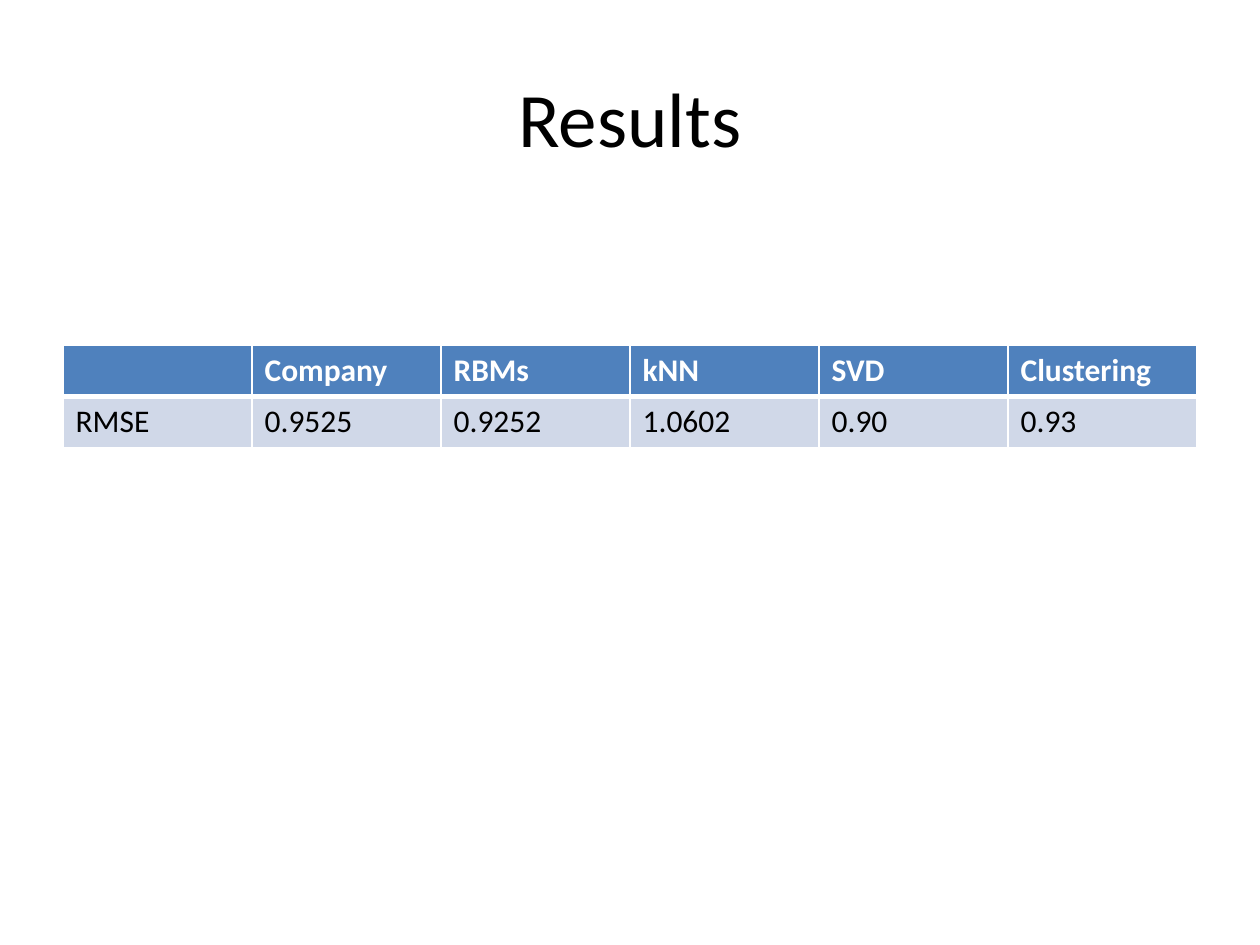
from dataclasses import dataclass

from lxml import etree
from pptx import Presentation
from pptx.dml.color import RGBColor
from pptx.enum.text import MSO_ANCHOR, PP_ALIGN
from pptx.oxml.ns import qn
from pptx.util import Inches, Pt

CENTER = PP_ALIGN.CENTER
MIDDLE = MSO_ANCHOR.MIDDLE
TITLE_ONLY = 5

RESULTS = [
    ["", "Company", "RBMs", "kNN", "SVD", "Clustering"],
    ["RMSE", "0.9525", "0.9252", "1.0602", "0.90", "0.93"],
]


@dataclass(frozen=True)
class Theme:
    """Colours, type and rule widths of the slide."""

    font: str = "Calibri"
    title_size: int = 44
    table_size: int = 18
    ink: str = "000000"
    paper: str = "FFFFFF"
    header: str = "4F81BD"
    band: str = "D0D8E8"
    thin_rule: int = 1
    header_rule: int = 3


THEME = Theme()


def style_text(paragraph, size, color, bold=False):
    """Format every run of a paragraph."""
    for run in paragraph.runs:
        run.font.name = THEME.font
        run.font.size = Pt(size)
        run.font.bold = bold
        run.font.color.rgb = RGBColor.from_string(color)


def add_title(slide, text):
    """Place and format the slide title."""
    title = slide.shapes.title
    title.left, title.top = Inches(0.5), Inches(0.3)
    title.width, title.height = Inches(9), Inches(1.25)
    title.text_frame.text = text
    title.text_frame.vertical_anchor = MIDDLE
    heading = title.text_frame.paragraphs[0]
    heading.alignment = CENTER
    style_text(heading, THEME.title_size, THEME.ink)


def set_borders(cell, top, bottom):
    """Draw the cell's four rules, with thin ones at the sides."""
    properties = cell._tc.get_or_add_tcPr()
    widths = {"lnL": THEME.thin_rule, "lnR": THEME.thin_rule, "lnT": top, "lnB": bottom}
    for side, width in widths.items():
        rule = etree.SubElement(properties, qn(f"a:{side}"), w=str(Pt(width)))
        fill = etree.SubElement(rule, qn("a:solidFill"))
        etree.SubElement(fill, qn("a:srgbClr"), val=THEME.paper)


def style_cell(cell, text, is_header):
    """Fill one cell with its text, rules and colours."""
    top, bottom = THEME.thin_rule, THEME.header_rule
    if not is_header:
        top, bottom = bottom, top
    set_borders(cell, top, bottom)
    cell.fill.solid()
    cell.fill.fore_color.rgb = RGBColor.from_string(THEME.header if is_header else THEME.band)
    cell.text_frame.text = text
    paragraph = cell.text_frame.paragraphs[0]
    paragraph.font.size = Pt(THEME.table_size)
    style_text(paragraph, THEME.table_size, THEME.paper if is_header else THEME.ink, is_header)


def add_results_table(slide, rows):
    """Add the table of errors by method."""
    frame = slide.shapes.add_table(
        len(rows), len(rows[0]), Inches(0.5), Inches(2.74), Inches(9), Inches(0.81)
    )
    for row_index, row in enumerate(rows):
        for column_index, text in enumerate(row):
            style_cell(frame.table.cell(row_index, column_index), text, row_index == 0)


def main():
    """Build and save the results slide."""
    deck = Presentation()
    deck.slide_width, deck.slide_height = Inches(10), Inches(7.5)
    slide = deck.slides.add_slide(deck.slide_layouts[TITLE_ONLY])
    add_title(slide, "Results")
    add_results_table(slide, RESULTS)
    deck.save("out.pptx")


if __name__ == "__main__":
    main()
